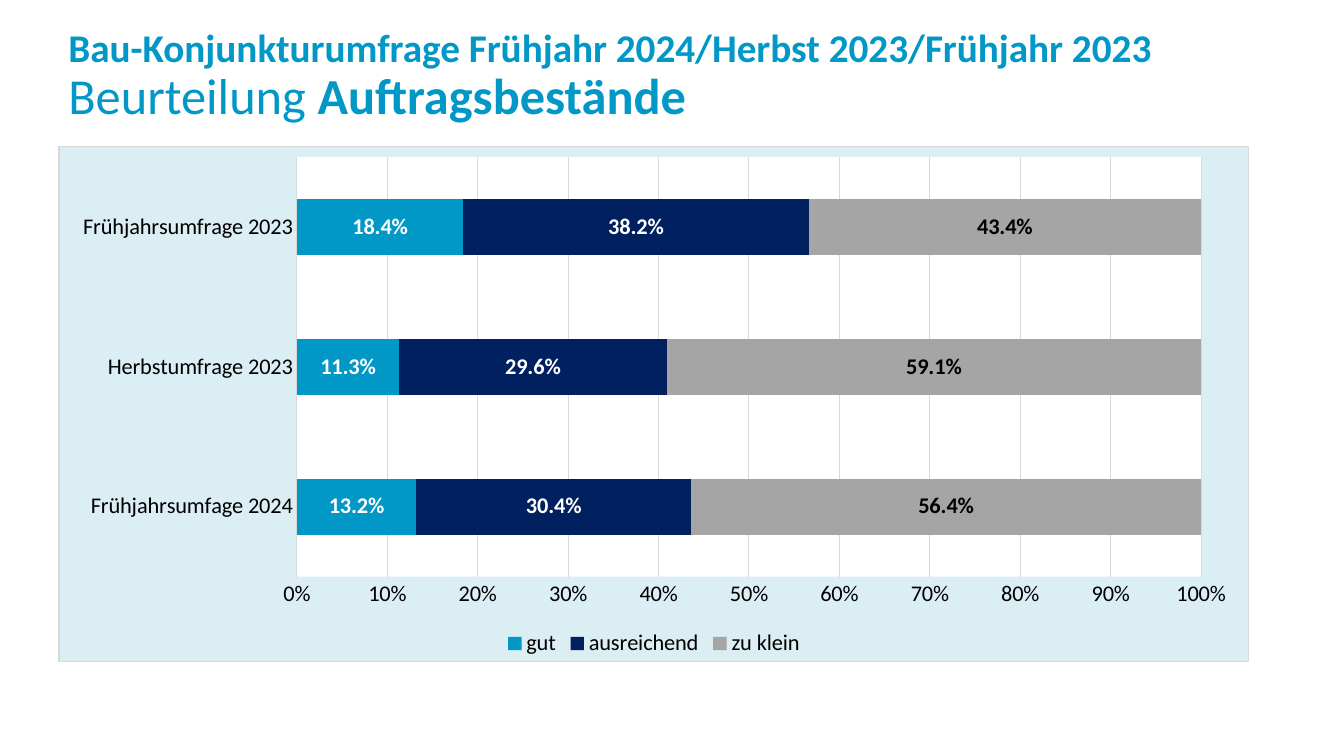
from dataclasses import dataclass

from lxml.etree import fromstring
from pptx import Presentation
from pptx.chart.chart import Chart
from pptx.chart.data import CategoryChartData as ChartData
from pptx.dml.color import RGBColor
from pptx.enum.chart import XL_CHART_TYPE as Kind
from pptx.enum.chart import XL_LABEL_POSITION as Spot
from pptx.enum.chart import XL_LEGEND_POSITION as Side
from pptx.enum.chart import XL_TICK_MARK as Tick
from pptx.enum.text import MSO_ANCHOR as Anchor
from pptx.oxml.ns import nsdecls, qn
from pptx.slide import Slide
from pptx.util import Inches, Pt

FACE = "Calibri"
BLUE = RGBColor(0x01, 0x97, 0xC6)
NAVY = RGBColor(0x00, 0x20, 0x60)
GRAY = RGBColor(0xA5, 0xA5, 0xA5)
RULE = RGBColor(0xD9, 0xD9, 0xD9)
PALE = RGBColor(0xDB, 0xEE, 0xF4)
WHITE = RGBColor(0xFF, 0xFF, 0xFF)
BLACK = RGBColor(0x00, 0x00, 0x00)

WIDE, HIGH = Inches(13.33), Inches(7.5)


@dataclass
class Box:
    """A place on the slide, in shares of its size."""
    x: float
    y: float
    w: float
    h: float

    def place(self) -> tuple[int, int, int, int]:
        return (int(self.x * WIDE), int(self.y * HIGH),
                int(self.w * WIDE), int(self.h * HIGH))


@dataclass
class Answer:
    name: str
    shares: tuple[float, ...]
    fill: RGBColor
    ink: RGBColor


@dataclass
class Piece:
    text: str
    size: int
    bold: bool


HEAD = Box(0.0435, 0.0227, 0.9115, 0.1573)
PANEL = Box(0.0435, 0.1933, 0.886, 0.6827)
PLOT = Box(0.2, 0.02, 0.76, 0.815)  # shares of the panel

LINES = [
    [Piece("Bau-Konjunkturumfrage Frühjahr 2024/Herbst 2023/Frühjahr 2023", 28, True)],
    [Piece("Beurteilung ", 36, False), Piece("Auftragsbestände", 36, True)],
]
POLLS = ["Frühjahrsumfage 2024", "Herbstumfrage 2023", "Frühjahrsumfrage 2023"]
ANSWERS = [
    Answer("gut", (0.132, 0.113, 0.184), BLUE, WHITE),
    Answer("ausreichend", (0.304, 0.296, 0.382), NAVY, WHITE),
    Answer("zu klein", (0.564, 0.591, 0.434), GRAY, BLACK),
]


def set_font(font, ink: RGBColor, size: int = 16, bold: bool = False) -> None:
    font.name, font.size, font.bold = FACE, Pt(size), bold
    font.color.rgb = ink


def add_head(slide: Slide) -> None:
    frame = slide.shapes.add_textbox(*HEAD.place()).text_frame
    frame.word_wrap = True
    frame.vertical_anchor = Anchor.MIDDLE
    para = frame.paragraphs[0]
    para.line_spacing = 0.9
    for row, line in enumerate(LINES):
        if row:
            para.add_line_break()
        for piece in line:
            run = para.add_run()
            run.text = piece.text
            set_font(run.font, BLUE, piece.size, piece.bold)


def area(fill: RGBColor, edge: str):
    return fromstring(
        f'<c:spPr {nsdecls("c", "a")}><a:solidFill><a:srgbClr val="{fill}"/>'
        f'</a:solidFill><a:ln w="{Pt(0.75)}">{edge}</a:ln></c:spPr>')


def paint(chart: Chart) -> None:
    """Fill the panel and the plot, and fix the plot's place."""
    root = chart.element.find(qn("c:chart"))
    root.addnext(area(PALE, f'<a:solidFill><a:srgbClr val="{RULE}"/></a:solidFill>'))
    plot = root.find(qn("c:plotArea"))
    plot.append(area(WHITE, "<a:noFill/>"))
    for old in plot.findall(qn("c:layout")):
        plot.remove(old)
    spots = "".join(f'<c:{key} val="{getattr(PLOT, key)}"/>' for key in "xywh")
    plot.insert(0, fromstring(
        f'<c:layout {nsdecls("c")}><c:manualLayout><c:layoutTarget val="inner"/>'
        f'<c:xMode val="edge"/><c:yMode val="edge"/>{spots}'
        '</c:manualLayout></c:layout>'))


def add_bars(slide: Slide) -> None:
    data = ChartData(number_format="0.0%")
    data.categories = POLLS
    for item in ANSWERS:
        data.add_series(item.name, item.shares)
    chart = slide.shapes.add_chart(Kind.BAR_STACKED_100, *PANEL.place(), data).chart
    chart.has_title = False
    set_font(chart.font, BLACK)

    # Bars and their labels
    plot = chart.plots[0]
    plot.gap_width, plot.overlap = 150, 100
    plot.vary_by_categories = False
    for item, bars in zip(ANSWERS, plot.series):
        bars.format.fill.solid()
        bars.format.fill.fore_color.rgb = item.fill
        labels = bars.data_labels
        labels.show_value = True
        labels.number_format, labels.number_format_is_linked = "0.0%", False
        labels.position = Spot.CENTER
        set_font(labels.font, item.ink, bold=True)

    # Axes
    polls, scale = chart.category_axis, chart.value_axis
    for axis in (polls, scale):
        axis.major_tick_mark = axis.minor_tick_mark = Tick.NONE
        set_font(axis.tick_labels.font, BLACK)
    scale.minimum_scale, scale.maximum_scale, scale.major_unit = 0, 1, 0.1
    scale.tick_labels.number_format = "0%"
    scale.tick_labels.number_format_is_linked = False
    scale.format.line.fill.background()
    scale.has_major_gridlines = True
    for line in (polls.format.line, scale.major_gridlines.format.line):
        line.color.rgb, line.width = RULE, Pt(0.75)

    # Legend
    chart.has_legend = True
    chart.legend.position = Side.BOTTOM
    chart.legend.include_in_layout = False
    set_font(chart.legend.font, BLACK)
    paint(chart)


def main() -> None:
    deck = Presentation()
    deck.slide_width, deck.slide_height = WIDE, HIGH
    slide = deck.slides.add_slide(deck.slide_layouts[6])
    add_head(slide)
    add_bars(slide)
    deck.save("out.pptx")


if __name__ == "__main__":
    main()
